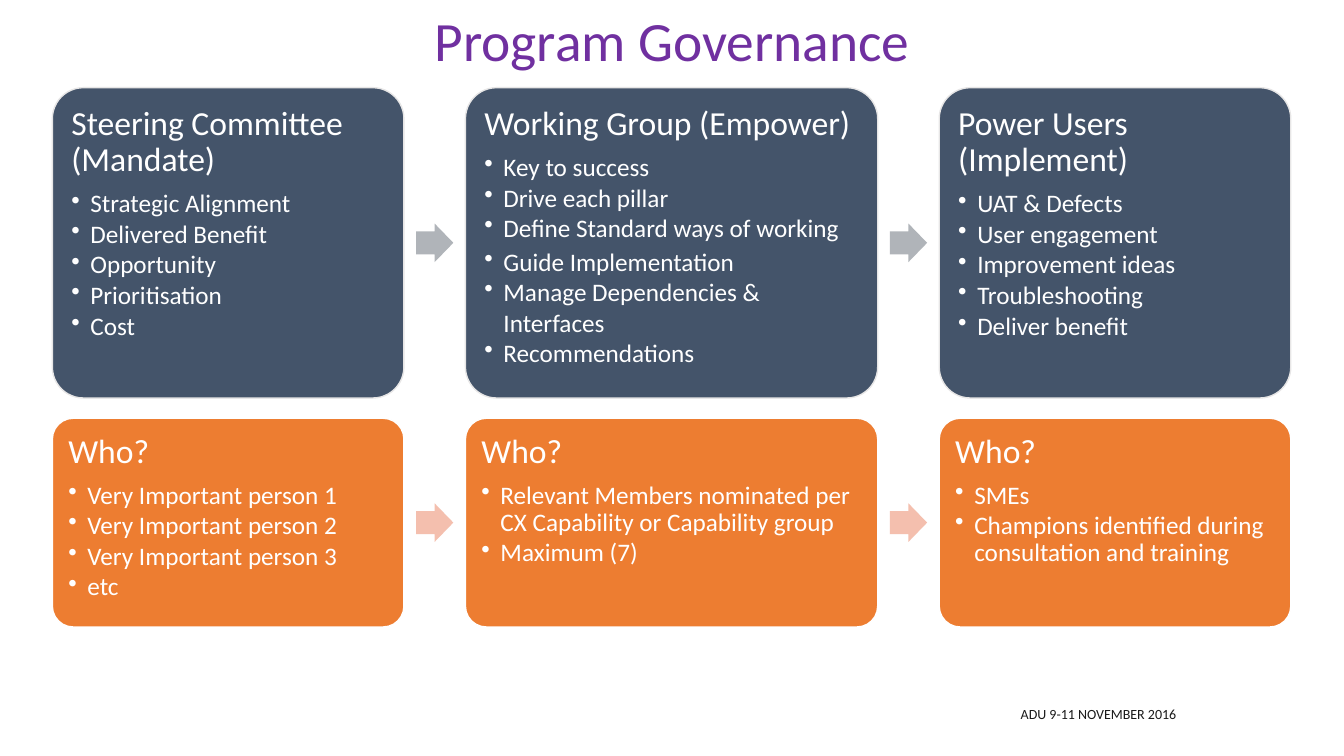
from dataclasses import dataclass

from pptx import Presentation
from pptx.dml.color import RGBColor
from pptx.enum.shapes import MSO_SHAPE
from pptx.enum.text import MSO_ANCHOR, MSO_AUTO_SIZE, PP_ALIGN
from pptx.oxml import parse_xml
from pptx.oxml.ns import nsdecls
from pptx.util import Cm, Pt


@dataclass(frozen=True)
class Theme:
    font: str = "Calibri"
    purple: str = "7030A0"
    slate: str = "44546A"
    slate_edge: str = "E7E6E6"
    slate_arrow: str = "B0B4B9"
    orange: str = "ED7D31"
    orange_arrow: str = "F4BFAE"
    white: str = "FFFFFF"
    ink: str = "1A1A1A"
    title_size: float = 39.6
    heading_size: float = 24
    bullet_size: float = 18
    footer_size: float = 10


theme = Theme()


def style_text(paragraph, size, color):
    for run in paragraph.runs:
        run.font.name = theme.font
        run.font.size = Pt(size)
        run.font.color.rgb = RGBColor.from_string(color)


def add_block(shape_type, left, top, width, height, fill, adjustments):
    """Add a filled, shadowless, borderless preset shape; lengths are in cm."""
    block = slide.shapes.add_shape(shape_type, Cm(left), Cm(top), Cm(width), Cm(height))
    for index, value in enumerate(adjustments):
        block.adjustments[index] = value
    block.shadow.inherit = False
    block.fill.solid()
    block.fill.fore_color.rgb = RGBColor.from_string(fill)
    block.line.fill.background()
    return block


prs = Presentation()
prs.slide_width, prs.slide_height = Cm(33.87), Cm(19.05)
slide = prs.slides.add_slide(prs.slide_layouts[5])

title = slide.shapes.title
title.left, title.top, title.width, title.height = Cm(5.51), Cm(0.51), Cm(22.86), Cm(1.19)
title.text_frame.text = "Program Governance"
title.text_frame.auto_size = MSO_AUTO_SIZE.NONE
title.text_frame.vertical_anchor = MSO_ANCHOR.MIDDLE
title_line = title.text_frame.paragraphs[0]
title_line.alignment = PP_ALIGN.CENTER
title_line.line_spacing = 0.9
style_text(title_line, theme.title_size, theme.purple)

columns = [(1.32, 8.86), (11.73, 10.39), (23.67, 8.86)]  # left, width
arrow_width, arrow_height = 0.94, 0.97

# top, height, fill, edge, arrow colour, cards
rows = [
    (2.21, 7.82, theme.slate, theme.slate_edge, theme.slate_arrow, [
        ("Steering Committee (Mandate)",
         ["Strategic Alignment", "Delivered Benefit", "Opportunity", "Prioritisation", "Cost"]),
        ("Working Group (Empower)",
         ["Key to success", "Drive each pillar", "Define Standard ways of working",
          "Guide Implementation", "Manage Dependencies & Interfaces", "Recommendations"]),
        ("Power Users (Implement)",
         ["UAT & Defects", "User engagement", "Improvement ideas", "Troubleshooting",
          "Deliver benefit"]),
    ]),
    (10.54, 5.26, theme.orange, theme.white, theme.orange_arrow, [
        ("Who?", ["Very Important person 1", "Very Important person 2",
                  "Very Important person 3", "etc"]),
        ("Who?", ["Relevant Members nominated per CX Capability or Capability group",
                  "Maximum (7)"]),
        ("Who?", ["SMEs", "Champions identified during consultation and training"]),
    ]),
]
single_spaced = {"Guide Implementation", "Manage Dependencies & Interfaces", "Recommendations"}

for top, height, fill, edge, arrow_color, cards in rows:
    for (left, width), (heading, bullets) in zip(columns, cards):
        card = add_block(MSO_SHAPE.ROUNDED_RECTANGLE, left, top, width, height, fill, [0.1])
        card.line.color.rgb = RGBColor.from_string(edge)
        card.line.width = Pt(1)

        frame = card.text_frame
        frame.word_wrap = True
        frame.vertical_anchor = MSO_ANCHOR.TOP
        frame.margin_left = frame.margin_right = Cm(0.25)
        frame.margin_top = frame.margin_bottom = Cm(0.25)
        frame.text = "\n".join([heading, *bullets])

        heading_line, *bullet_lines = frame.paragraphs
        heading_line.alignment = PP_ALIGN.LEFT
        heading_line.line_spacing = 0.9
        heading_line.space_after = Pt(8.4)
        style_text(heading_line, theme.heading_size, theme.white)

        for line in bullet_lines:
            is_single = line.text in single_spaced
            line.alignment = PP_ALIGN.LEFT
            line.line_spacing = 1.0 if is_single else 0.9
            line.space_after = Pt(0 if is_single else 2.4)
            style_text(line, theme.bullet_size, theme.white)
            properties = line._p.get_or_add_pPr()
            properties.set("marL", str(Cm(0.48)))
            properties.set("indent", str(-Cm(0.48)))
            properties.append(parse_xml(f'<a:buChar {nsdecls("a")} char="•"/>'))

    for (left, width), (next_left, _) in zip(columns, columns[1:]):
        arrow_left = (left + width + next_left - arrow_width) / 2
        arrow_top = top + (height - arrow_height) / 2
        add_block(MSO_SHAPE.RIGHT_ARROW, arrow_left, arrow_top, arrow_width, arrow_height,
                  arrow_color, [0.6, 0.5])

footer = slide.shapes.add_textbox(Cm(13.51), Cm(17.6), Cm(16.38), Cm(0.76)).text_frame
footer.word_wrap = True
footer.vertical_anchor = MSO_ANCHOR.MIDDLE
footer.text = "ADU 9-11 NOVEMBER 2016"
footer.paragraphs[0].alignment = PP_ALIGN.RIGHT
style_text(footer.paragraphs[0], theme.footer_size, theme.ink)

prs.save("out.pptx")
